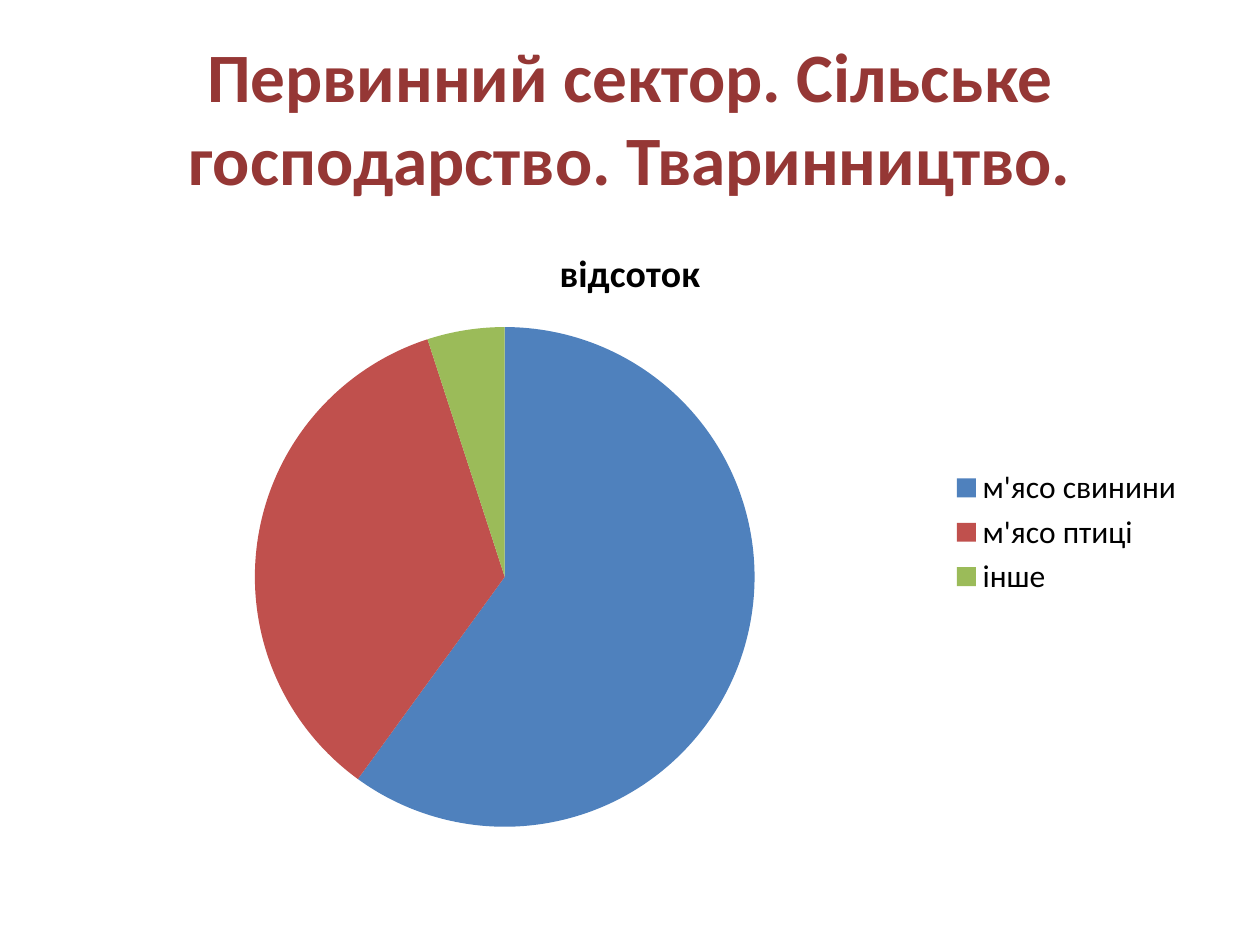
"""Build a slide with a pie chart of livestock production shares."""
from pptx import Presentation
from pptx.chart.data import CategoryChartData
from pptx.dml.color import RGBColor
from pptx.enum.chart import XL_CHART_TYPE, XL_LEGEND_POSITION
from pptx.enum.text import MSO_ANCHOR, PP_ALIGN
from pptx.util import Inches, Pt

PIE = XL_CHART_TYPE.PIE
RIGHT = XL_LEGEND_POSITION.RIGHT
MIDDLE = MSO_ANCHOR.MIDDLE
CENTER = PP_ALIGN.CENTER

FONT = "Calibri"
TITLE = "Первинний сектор. Сільське господарство. Тваринництво."
CHART_TITLE = "відсоток"
SHARES = [
    ("м'ясо свинини", 60, "4F81BD"),
    ("м'ясо птиці", 35, "C0504D"),
    ("інше", 5, "9BBB59"),
]
TITLE_BOX = (0.5, 0.3, 9, 1.25)
CHART_BOX = (0.5, 1.75, 9, 4.95)


def color(value):
    return RGBColor.from_string(value)


def write_text(frame, text, size, fill="000000", bold=False):
    paragraph = frame.paragraphs[0]
    paragraph.alignment = CENTER
    run = paragraph.add_run()
    run.text = text
    run.font.name = FONT
    run.font.size = Pt(size)
    run.font.bold = bold
    run.font.color.rgb = color(fill)


def add_title(slide):
    frame = slide.shapes.add_textbox(*map(Inches, TITLE_BOX)).text_frame
    frame.word_wrap = True
    frame.vertical_anchor = MIDDLE
    write_text(frame, TITLE, size=39.6, fill="953735", bold=True)


def add_share_chart(slide):
    names, values, fills = zip(*SHARES)
    data = CategoryChartData()
    data.categories = names
    data.add_series(CHART_TITLE, values)
    chart = slide.shapes.add_chart(PIE, *map(Inches, CHART_BOX), data).chart
    chart.font.name = FONT
    chart.font.size = Pt(18)
    chart.font.color.rgb = color("000000")
    chart.has_title = True
    write_text(chart.chart_title.text_frame, CHART_TITLE, size=21.6, bold=True)
    chart.chart_title.include_in_layout = False
    chart.has_legend = True
    chart.legend.position = RIGHT
    chart.legend.include_in_layout = False
    plot = chart.plots[0]
    plot.vary_by_categories = True
    for index, fill in enumerate(fills):
        point_fill = plot.series[0].points[index].format.fill
        point_fill.solid()
        point_fill.fore_color.rgb = color(fill)


def main():
    presentation = Presentation()
    presentation.slide_width = Inches(10)
    presentation.slide_height = Inches(7.5)
    slide = presentation.slides.add_slide(presentation.slide_layouts[6])
    add_title(slide)
    add_share_chart(slide)
    presentation.save("out.pptx")


if __name__ == "__main__":
    main()
